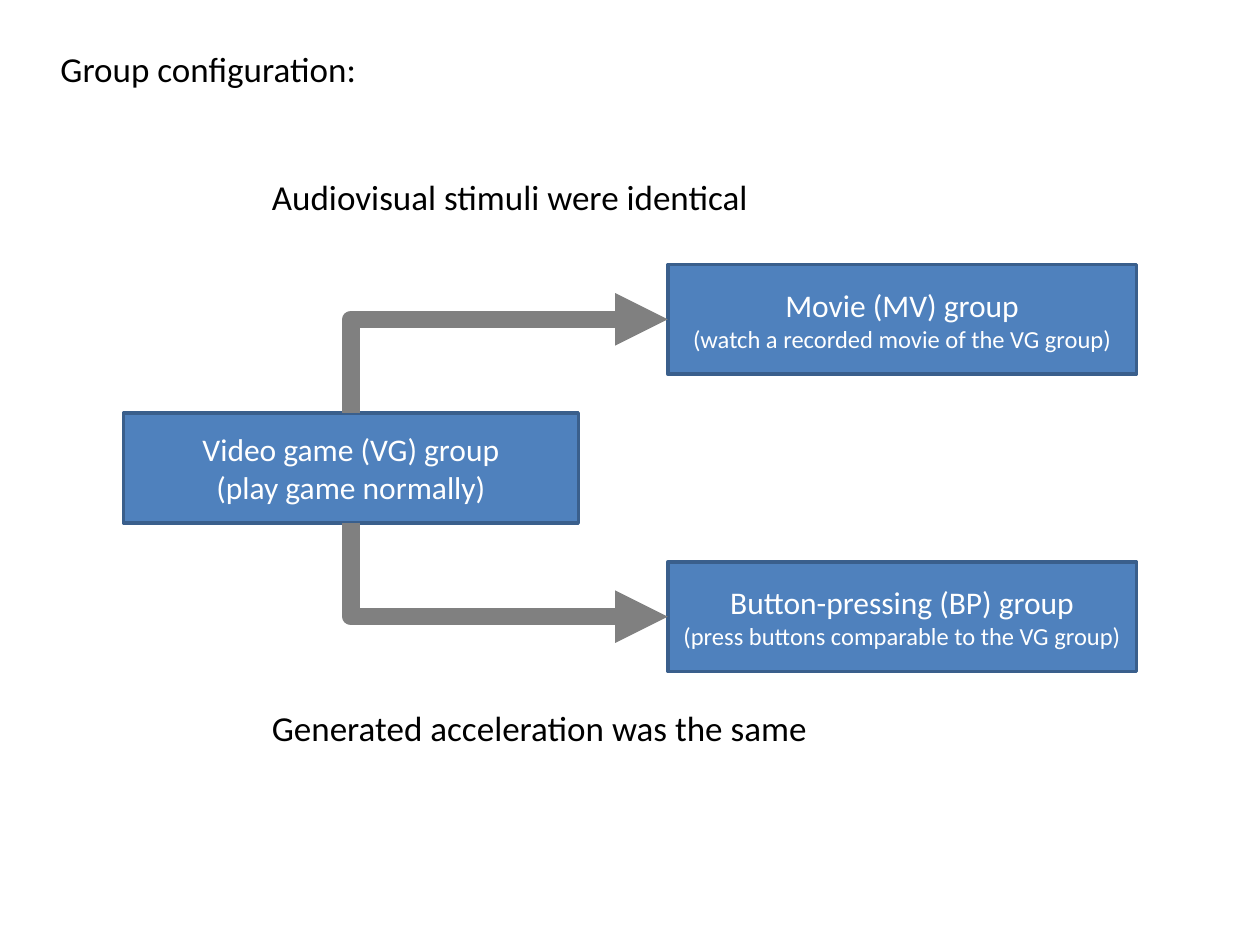
"""Build the group configuration slide with three groups and two arrows."""
from lxml.etree import SubElement
from pptx import Presentation
from pptx.dml.color import RGBColor
from pptx.enum.shapes import MSO_CONNECTOR, MSO_SHAPE
from pptx.enum.text import MSO_ANCHOR, MSO_AUTO_SIZE, PP_ALIGN
from pptx.oxml.ns import qn
from pptx.util import Inches, Pt

FONT = "Calibri"
BLACK = RGBColor(0x00, 0x00, 0x00)
WHITE = RGBColor(0xFF, 0xFF, 0xFF)
BLUE = RGBColor(0x4F, 0x81, 0xBD)
DARK_BLUE = RGBColor(0x3A, 0x5F, 0x8C)
GRAY = RGBColor(0x80, 0x80, 0x80)

TITLE = ("Group configuration:", 0.38, 0.33, 2.57)
NOTES = [
    ("Audiovisual stimuli were identical", 2.06, 1.34, 4.02),
    ("Generated acceleration was the same", 2.06, 5.56, 4.5),
]
NOTE_HEIGHT = 0.44
GROUPS = {
    "game": (0.98, 3.28, 3.61, [("Video game (VG) group", 18), ("(play game normally)", 18)]),
    "movie": (5.3, 2.1, 3.72, [("Movie (MV) group", 18),
                               ("(watch a recorded movie of the VG group)", 14)]),
    "button": (5.3, 4.46, 3.72, [("Button-pressing (BP) group", 18),
                                 ("(press buttons comparable to the VG group)", 14)]),
}
GROUP_HEIGHT = 0.87
TOP_SITE, LEFT_SITE, BOTTOM_SITE = 0, 1, 2
ARROWS = [
    ("game", "movie", TOP_SITE, {"rot": "5400000", "flipH": "1", "flipV": "1"}),
    ("game", "button", BOTTOM_SITE, {"rot": "16200000", "flipH": "1", "flipV": "0"}),
]


def format_paragraph(paragraph, text, size, color, alignment):
    paragraph.text = text
    paragraph.alignment = alignment
    paragraph.font.name = FONT
    paragraph.font.size = Pt(size)
    paragraph.font.color.rgb = color


def fill_note(shape, text, left, top, width):
    shape.left, shape.top = Inches(left), Inches(top)
    shape.width, shape.height = Inches(width), Inches(NOTE_HEIGHT)
    frame = shape.text_frame
    frame.word_wrap = False
    frame.auto_size = MSO_AUTO_SIZE.SHAPE_TO_FIT_TEXT
    frame.vertical_anchor = MSO_ANCHOR.TOP
    format_paragraph(frame.paragraphs[0], text, 20, BLACK, PP_ALIGN.LEFT)


def add_group(slide, left, top, width, lines):
    box = slide.shapes.add_shape(MSO_SHAPE.RECTANGLE, Inches(left), Inches(top),
                                 Inches(width), Inches(GROUP_HEIGHT))
    box.shadow.inherit = False
    box.fill.solid()
    box.fill.fore_color.rgb = BLUE
    box.line.color.rgb = DARK_BLUE
    box.line.width = Pt(2)
    frame = box.text_frame
    frame.word_wrap = True
    frame.vertical_anchor = MSO_ANCHOR.MIDDLE
    for index, (text, size) in enumerate(lines):
        paragraph = frame.add_paragraph() if index else frame.paragraphs[0]
        format_paragraph(paragraph, text, size, WHITE, PP_ALIGN.CENTER)
    return box


def add_arrow(slide, source, target, site, turn):
    start_x = source.left + source.width // 2
    start_y = source.top + (source.height if site == BOTTOM_SITE else 0)
    end_x, end_y = target.left, target.top + target.height // 2
    arrow = slide.shapes.add_connector(MSO_CONNECTOR.ELBOW, start_x, start_y, end_x, end_y)
    arrow.begin_connect(source, site)
    arrow.end_connect(target, LEFT_SITE)
    arrow.line.color.rgb = GRAY
    arrow.line.width = Pt(10)

    across, down = end_x - start_x, abs(end_y - start_y)
    arrow.width, arrow.height = down, across
    arrow.left = (start_x + end_x - down) // 2
    arrow.top = (start_y + end_y - across) // 2
    properties = arrow.element.spPr
    properties.find(qn("a:prstGeom")).set("prst", "bentConnector2")
    transform = properties.find(qn("a:xfrm"))
    for name, value in turn.items():
        transform.set(name, value)
    line = properties.find(qn("a:ln"))
    SubElement(line, qn("a:round"))
    SubElement(line, qn("a:tailEnd"), type="triangle")
    SubElement(properties, qn("a:effectLst"))


def main():
    presentation = Presentation()
    presentation.slide_width, presentation.slide_height = Inches(10), Inches(7.5)
    slide = presentation.slides.add_slide(presentation.slide_layouts.get_by_name("Title Only"))
    fill_note(slide.shapes.title, *TITLE)
    boxes = {name: add_group(slide, *group) for name, group in GROUPS.items()}
    for source, target, site, turn in ARROWS:
        add_arrow(slide, boxes[source], boxes[target], site, turn)
    for note in NOTES:
        fill_note(slide.shapes.add_textbox(0, 0, 0, 0), *note)
    presentation.save("out.pptx")


if __name__ == "__main__":
    main()
